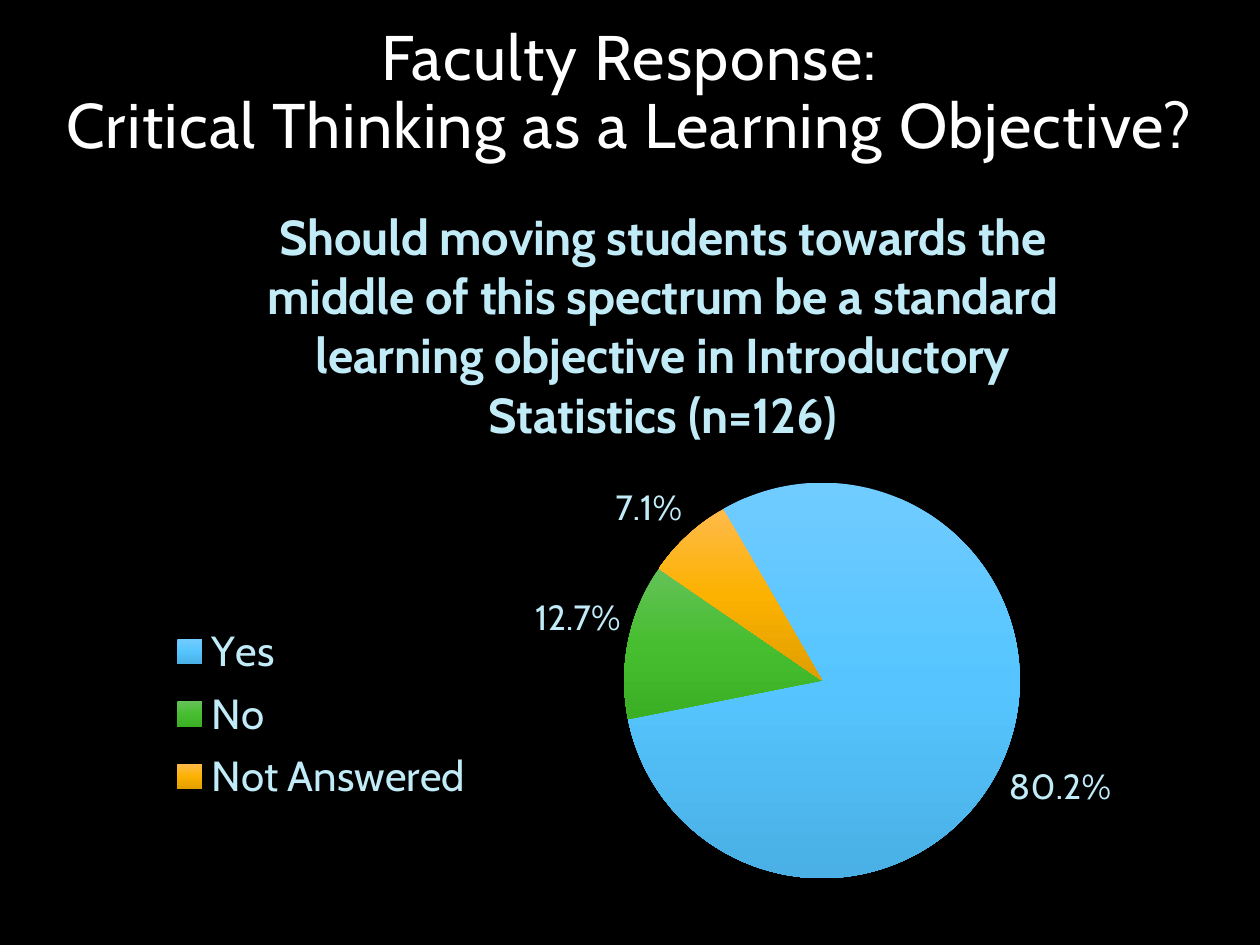
from lxml import etree
from pptx import Presentation
from pptx.chart.data import CategoryChartData
from pptx.dml.color import RGBColor
from pptx.enum.chart import XL_CHART_TYPE, XL_LABEL_POSITION, XL_LEGEND_POSITION
from pptx.enum.text import MSO_ANCHOR, MSO_AUTO_SIZE, PP_ALIGN
from pptx.oxml.ns import qn
from pptx.util import Inches, Pt

PIE = XL_CHART_TYPE.PIE
OUTSIDE = XL_LABEL_POSITION.OUTSIDE_END
LEFT = XL_LEGEND_POSITION.LEFT
CENTER = PP_ALIGN.CENTER
BOTTOM = MSO_ANCHOR.BOTTOM
NO_AUTOFIT = MSO_AUTO_SIZE.NONE

FONT = "Cabin"
COLORS = {"background": "000000", "title": "FFFFFF", "chart_text": "C1EBF7"}
TITLE = "Faculty Response:\vCritical Thinking as a Learning Objective?"
QUESTION = ("Should moving students towards the middle of this spectrum be a standard "
            "learning objective in Introductory Statistics (n=126)")
ANSWERS = [
    ("Yes", 0.802, ("70CBFF", "56C5FF", "4AB0E5")),
    ("No", 0.127, ("64C258", "47BE30", "3BAF24")),
    ("Not Answered", 0.071, ("FFBA4B", "FCB200", "E09E00")),
]
CHART_BOX = (1.22, 1.37, 8.08, 5.75)
PIE_BOX = (4.95, 3.83, 3.14, 3.14)
LEGEND_BOX = (1.3, 4.88, 2.5, 1.58)
START_ANGLE = 330


def format_font(font, size, color, bold=False):
    font.name = FONT
    font.size = Pt(size)
    font.bold = bold
    font.color.rgb = RGBColor.from_string(COLORS[color])


def write(tf, text, size, color, bold=False, line_spacing=None, spacing=None):
    p = tf.paragraphs[0]
    p.text = text
    p.alignment = CENTER
    if line_spacing:
        p.line_spacing = line_spacing
    for r in p.runs:
        format_font(r.font, size, color, bold)
        if spacing:
            r.font._element.set("spc", str(round(spacing * 100)))


def make_layout(box, inner=False):
    layout = etree.Element(qn("c:layout"))
    manual = etree.SubElement(layout, qn("c:manualLayout"))
    left, top, width, height = CHART_BOX
    x, y, w, h = box
    values = [("xMode", "edge"), ("yMode", "edge"),
              ("x", round((x - left) / width, 3)), ("y", round((y - top) / height, 3)),
              ("w", round(w / width, 3)), ("h", round(h / height, 3))]
    if inner:
        values.insert(0, ("layoutTarget", "inner"))
    for tag, value in values:
        etree.SubElement(manual, qn(f"c:{tag}")).set("val", str(value))
    return layout


def replace_child(parent, child, index):
    for old in parent.findall(child.tag):
        parent.remove(old)
    parent.insert(index, child)


def fill_gradient(fill, stops):
    fill.gradient()
    fill.gradient_angle = 270
    gs_list = fill._xPr.find(qn("a:gradFill")).find(qn("a:gsLst"))
    for old in list(gs_list):
        gs_list.remove(old)
    for i, color in enumerate(stops):
        gs = etree.SubElement(gs_list, qn("a:gs"), pos=str(i * 50000))
        etree.SubElement(gs, qn("a:srgbClr"), val=color)


def add_title(slide):
    sp = slide.shapes.title
    sp.left, sp.top, sp.width, sp.height = map(Inches, (0, 0.42, 10, 0.92))
    tf = sp.text_frame
    tf.word_wrap = True
    tf.auto_size = NO_AUTOFIT
    tf.vertical_anchor = BOTTOM
    write(tf, TITLE, 36, "title", line_spacing=0.9, spacing=0.8)


def add_pie(slide):
    data = CategoryChartData(number_format="0.0%")
    data.categories = [name for name, _, _ in ANSWERS]
    data.add_series("Series 1", [share for _, share, _ in ANSWERS])
    chart = slide.shapes.add_chart(PIE, *map(Inches, CHART_BOX), data).chart
    format_font(chart.font, 10, "title")

    chart.has_title = True
    write(chart.chart_title.text_frame, QUESTION, 28, "chart_text", bold=True)

    chart.has_legend = True
    legend = chart.legend
    legend.position = LEFT
    legend.include_in_layout = False
    format_font(legend.font, 24, "chart_text")
    replace_child(legend._element, make_layout(LEGEND_BOX), 1)

    plot = chart.plots[0]
    plot.vary_by_categories = True
    plot.has_data_labels = True
    labels = plot.data_labels
    labels.show_value = True
    labels.show_percentage = False
    labels.number_format = "0.0%"
    labels.number_format_is_linked = False
    labels.position = OUTSIDE
    format_font(labels.font, 20, "chart_text")
    for i, (_, _, stops) in enumerate(ANSWERS):
        point = plot.series[0].points[i]
        fill_gradient(point.format.fill, stops)
        point.format.line.fill.background()

    pie = plot._element
    angle = etree.Element(qn("c:firstSliceAng"), val=str(START_ANGLE))
    replace_child(pie, angle, len(pie))
    replace_child(pie.getparent(), make_layout(PIE_BOX, inner=True), 0)


def main():
    prs = Presentation()
    prs.slide_width, prs.slide_height = Inches(10), Inches(7.5)
    slide = prs.slides.add_slide(prs.slide_layouts[5])
    fill = slide.background.fill
    fill.solid()
    fill.fore_color.rgb = RGBColor.from_string(COLORS["background"])
    add_title(slide)
    add_pie(slide)
    prs.save("out.pptx")


if __name__ == "__main__":
    main()
